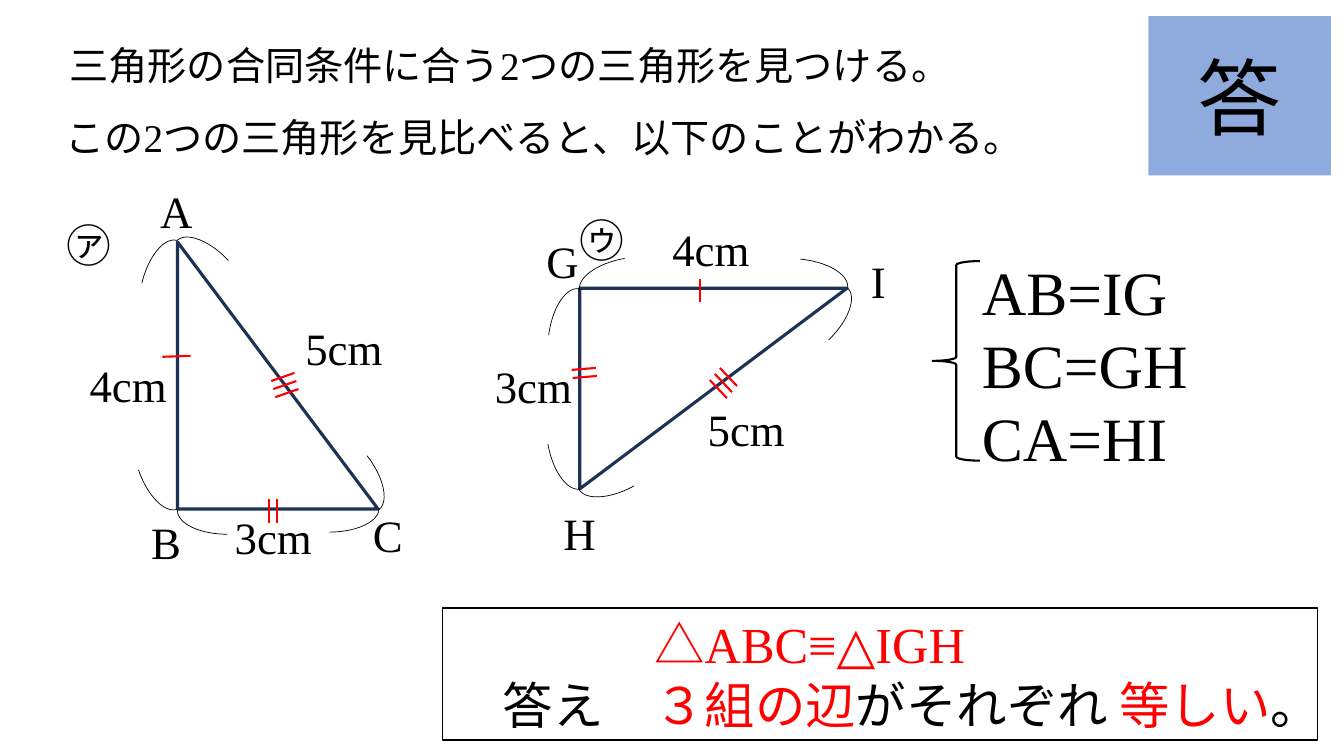
from lxml.etree import SubElement
from pptx import Presentation
from pptx.dml.color import RGBColor
from pptx.enum.shapes import MSO_CONNECTOR, MSO_SHAPE
from pptx.enum.text import MSO_ANCHOR, MSO_AUTO_SIZE, PP_ALIGN
from pptx.oxml.ns import qn
from pptx.util import Inches, Pt

BLACK = RGBColor(0x00, 0x00, 0x00)
RED = RGBColor(0xFF, 0x00, 0x00)
NAVY = RGBColor(0x1E, 0x32, 0x56)
BLUE = RGBColor(0x8F, 0xAA, 0xDC)
SERIF = "Times New Roman"
GOTHIC = "Noto Sans CJK JP"

LABELS = [
    ("A", 1.49, 1.77, 0.28), ("B", 1.4, 5.06, 0.28), ("C", 3.6, 4.99, 0.28),
    ("4cm", 0.79, 3.5, 1.49), ("3cm", 2.23, 5.01, 1.57), ("5cm", 2.93, 3.13, 1.4),
    ("G", 5.32, 2.27, 0.33), ("H", 5.49, 4.97, 0.33), ("I", 8.54, 2.47, 0.28),
    ("4cm", 6.57, 2.15, 1.44), ("3cm", 4.81, 3.51, 1.4), ("5cm", 6.92, 3.94, 1.41),
]
RIGHT_ARCS = [
    (1.86, 2.25, 316.7), (3.03, 4.55, 90), (1.36, 4.09, 160.9),
    (7.82, 2.71, 45.9), (5.43, 3.87, 169.8), (6, 2.3, 260.1),
]
LEFT_ARCS = [
    (3.22, 4.17, 142.3), (2.02, 4.57, 270), (1.4, 2.37, 13.7),
    (5.94, 4.12, 241.3), (5.44, 2.86, 7.5), (7.68, 2.31, 95.5),
]
TICKS = [
    ((1.61, 3.54), (1.89, 3.53), (0, 0), 1),
    ((2.67, 4.95), (2.67, 5.19), (0.08, 0), 2),
    ((2.92, 3.7), (2.69, 3.78), (0.02, 0.08), 3),
    ((6.94, 2.77), (6.94, 3), (0, 0), 1),
    ((5.91, 3.65), (5.67, 3.67), (0.01, 0.08), 2),
    ((7.31, 3.83), (7.14, 3.65), (-0.05, 0.06), 3),
]


def add_run(paragraph, text, size, color=BLACK, font=SERIF):
    run = paragraph.add_run()
    run.text = text
    run.font.size = Pt(size)
    run.font.name = font
    run.font.bold = False
    run.font.color.rgb = color
    SubElement(run.font._element, qn("a:ea")).set("typeface", GOTHIC)


def indent_first_line(paragraph, inches):
    properties = paragraph._p.get_or_add_pPr()
    properties.set("marL", "0")
    properties.set("indent", str(Inches(inches)))


def add_text(slide, text, box, size, font=SERIF, anchor=MSO_ANCHOR.TOP, indent=0):
    frame = slide.shapes.add_textbox(*map(Inches, box)).text_frame
    frame.word_wrap = True
    frame.auto_size = MSO_AUTO_SIZE.SHAPE_TO_FIT_TEXT
    frame.vertical_anchor = anchor
    paragraph = frame.paragraphs[0]
    if indent:
        indent_first_line(paragraph, indent)
    add_run(paragraph, text, size, font=font)


def add_outline(slide, kind, box, color, width, rotation=0, adjustments=()):
    outline = slide.shapes.add_shape(kind, *map(Inches, box))
    outline.shadow.inherit = False
    outline.fill.background()
    outline.line.color.rgb = color
    outline.line.width = Pt(width)
    outline.rotation = rotation
    for index, value in enumerate(adjustments):
        outline.adjustments[index] = value
    return outline


def add_arcs(slide, arcs, adjustments=()):
    for left, top, rotation in arcs:
        add_outline(slide, MSO_SHAPE.ARC, (left, top, 0.47, 0.99), BLACK, 0.5,
                    rotation, adjustments)


def add_ticks(slide, start, end, step, count):
    for index in range(count):
        dx, dy = step[0] * index, step[1] * index
        ends = (start[0] + dx, start[1] + dy, end[0] + dx, end[1] + dy)
        tick = slide.shapes.add_connector(MSO_CONNECTOR.STRAIGHT, *map(Inches, ends))
        tick.line.color.rgb = RED
        tick.line.width = Pt(1.5)
        SubElement(tick._element.spPr, qn("a:effectLst"))


def add_heading(slide):
    heading = slide.shapes.title
    heading.left, heading.top = Inches(11.39), Inches(0.16)
    heading.width, heading.height = Inches(1.81), Inches(1.58)
    heading.fill.solid()
    heading.fill.fore_color.rgb = BLUE
    frame = heading.text_frame
    frame.auto_size = MSO_AUTO_SIZE.NONE
    frame.word_wrap = False
    frame.vertical_anchor = MSO_ANCHOR.MIDDLE
    frame.paragraphs[0].alignment = PP_ALIGN.CENTER
    add_run(frame.paragraphs[0], "答", 60, font=GOTHIC)


def add_answer(slide):
    answer = add_outline(slide, MSO_SHAPE.RECTANGLE, (4.39, 6.03, 8.68, 1.31), BLACK, 1)
    frame = answer.text_frame
    frame.word_wrap = True
    frame.auto_size = MSO_AUTO_SIZE.SHAPE_TO_FIT_TEXT
    frame.vertical_anchor = MSO_ANCHOR.MIDDLE
    congruence, reason = frame.paragraphs[0], frame.add_paragraph()
    for paragraph, indent in ((congruence, 2), (reason, 0.5)):
        paragraph.alignment = PP_ALIGN.LEFT
        indent_first_line(paragraph, indent)
    add_run(congruence, "△", 36, RED, GOTHIC)
    add_run(congruence, "ABC≡△IGH", 36, RED)
    for text, color in (("答え", BLACK), ("　３組の辺", RED), ("がそれぞれ ", BLACK),
                        ("等しい", RED), ("。", BLACK)):
        add_run(reason, text, 36, color)


def main():
    presentation = Presentation()
    presentation.slide_width = Inches(13.33)
    presentation.slide_height = Inches(7.5)
    slide = presentation.slides.add_slide(presentation.slide_layouts[5])

    add_heading(slide)
    add_text(slide, "三角形の合同条件に合う2つの三角形を見つける。",
             (0.2, 0.36, 9.02, 0.57), 28, anchor=MSO_ANCHOR.MIDDLE, indent=0.39)
    add_text(slide, "この2つの三角形を見比べると、以下のことがわかる。",
             (0.16, 1.07, 10.59, 0.57), 28, anchor=MSO_ANCHOR.MIDDLE, indent=0.39)

    for row, equation in enumerate(("AB=IG", "BC=GH", "CA=HI")):
        add_text(slide, equation, (9.64, 2.47 + 0.72 * row, 2.56, 0.84), 44,
                 anchor=MSO_ANCHOR.MIDDLE)
    add_outline(slide, MSO_SHAPE.LEFT_BRACE, (9.25, 2.59, 0.47, 1.98), BLACK, 1.5)
    add_answer(slide)

    for left, top, rotation in ((1.76, 2.4, 0), (6.08, 2.53, 90)):
        add_outline(slide, MSO_SHAPE.ISOSCELES_TRIANGLE, (left, top, 1.99, 2.65),
                    NAVY, 2.25, rotation, (0,))
    add_arcs(slide, RIGHT_ARCS)
    add_arcs(slide, LEFT_ARCS, (107.97, 162.36))
    for text, left, top, width in LABELS:
        add_text(slide, text, (left, top, width, 0.64), 32)
    for tick_group in TICKS:
        add_ticks(slide, *tick_group)
    add_text(slide, "㋐", (0.56, 2.11, 0.57, 0.64), 32, GOTHIC)
    add_text(slide, "㋒", (5.65, 2.06, 0.57, 0.64), 32, GOTHIC)

    presentation.save("out.pptx")


if __name__ == "__main__":
    main()
